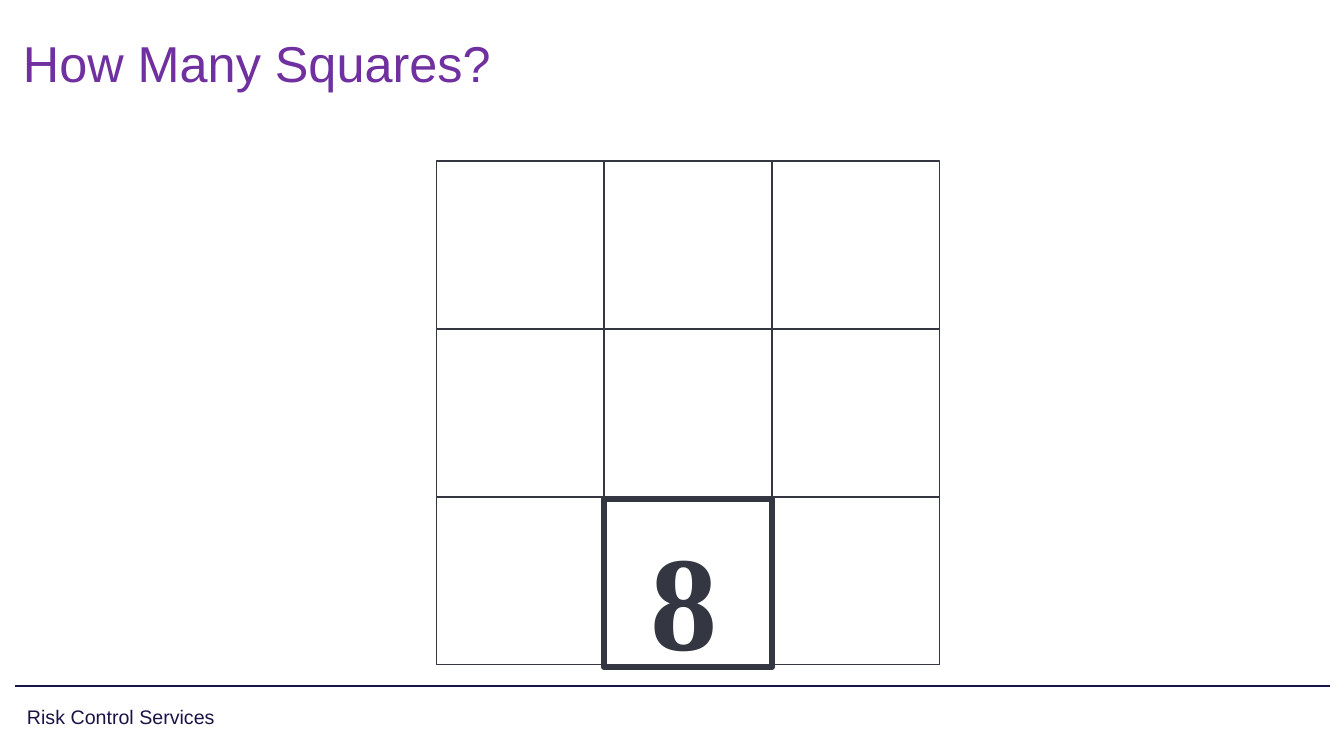
from lxml import etree
from pptx import Presentation
from pptx import util as u
from pptx.dml.color import RGBColor
from pptx.enum import shapes, text
from pptx.oxml.ns import qn

TITLE = "How Many Squares?"
FOOTER = "Risk Control Services"
NUMBER = "8"
COLORS = {"title": "7030A0", "navy": "1A1446", "ink": "343741"}

# Lengths in px
SLIDE = (1344, 756)
TITLE_BOX = (16, 25, 1135, 83)
FOOTER_BOX = (20, 697, 441, 42)
RULE = (15, 686, 1330, 686)
GRID_LEFT, GRID_TOP, SIDE, COUNT = 436, 161, 168, 3
MARKED = (2, 1)  # row and column of the heavy square
MARKED_DROP = 2
NUMBER_BOX = (605, 497, 159, 171)


def px(*lengths):
    return [u.Emu(round(n * 914400 / 100.8)) for n in lengths]


def rgb(name):
    return RGBColor.from_string(COLORS[name])


def write(sp, words, size, color, font="Arial", insets=(7, 5, 7, 5),
          anchor=text.MSO_ANCHOR.MIDDLE, align=text.PP_ALIGN.LEFT,
          spacing=0.9, bold=False):
    tf = sp.text_frame
    tf.text = words
    tf.word_wrap = True
    tf.auto_size = text.MSO_AUTO_SIZE.NONE
    tf.vertical_anchor = anchor
    tf.margin_left, tf.margin_top, tf.margin_right, tf.margin_bottom = px(*insets)
    p = tf.paragraphs[0]
    p.alignment = align
    p.line_spacing = spacing
    p.space_before = u.Pt(0)
    p.font.name, p.font.size, p.font.bold = font, u.Pt(size), bold
    p.font.color.rgb = rgb(color)


def add_square(s, row, col):
    marked = (row, col) == MARKED
    left = GRID_LEFT + col * SIDE
    top = GRID_TOP + row * SIDE + (MARKED_DROP if marked else 0)
    sp = s.shapes.add_shape(shapes.MSO_SHAPE.RECTANGLE, *px(left, top, SIDE, SIDE))
    sp.shadow.inherit = False
    sp.fill.background()
    sp.line.color.rgb = rgb("ink")
    sp.line.width = u.Pt(4.5 if marked else 0.75)


def main():
    prs = Presentation()
    prs.slide_width, prs.slide_height = px(*SLIDE)
    s = prs.slides.add_slide(prs.slide_layouts[5])

    title = s.shapes.title
    title.left, title.top, title.width, title.height = px(*TITLE_BOX)
    write(title, TITLE, 36, "title")

    write(s.shapes.add_textbox(*px(*FOOTER_BOX)), FOOTER, 14, "navy")
    rule = s.shapes.add_connector(shapes.MSO_CONNECTOR.STRAIGHT, *px(*RULE))
    rule.line.color.rgb = rgb("navy")
    rule.line.width = u.Pt(1)
    etree.SubElement(rule._element.spPr, qn("a:effectLst"))

    for row in range(COUNT):
        for col in range(COUNT):
            add_square(s, row, col)

    write(s.shapes.add_textbox(*px(*NUMBER_BOX)), NUMBER, 96, "ink",
          font="Times New Roman", insets=(10, 19, 10, 0),
          anchor=text.MSO_ANCHOR.TOP, align=text.PP_ALIGN.CENTER,
          spacing=1.0, bold=True)
    prs.save("out.pptx")


if __name__ == "__main__":
    main()
